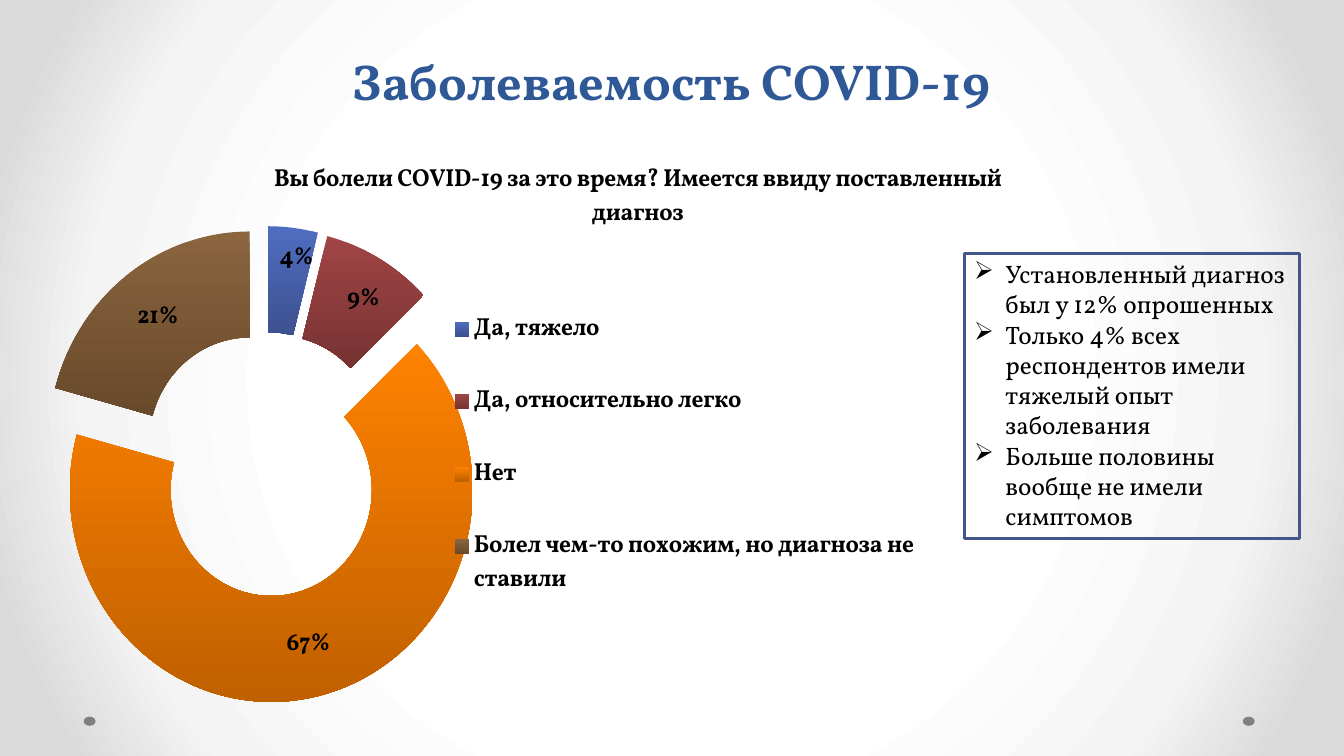
from lxml.etree import SubElement
from pptx import Presentation
from pptx.chart.data import CategoryChartData
from pptx.dml.color import RGBColor
from pptx.enum.chart import XL_CHART_TYPE, XL_LEGEND_POSITION
from pptx.enum.shapes import MSO_SHAPE
from pptx.enum.text import MSO_ANCHOR, PP_ALIGN
from pptx.oxml import parse_xml
from pptx.oxml.ns import nsdecls, qn
from pptx.util import Cm, Pt


class Theme:
    face = "Vollkorn"
    head = Pt(36)
    body = Pt(18)
    chart = Pt(17.6)
    blue = RGBColor.from_string("2F5897")
    edge = RGBColor.from_string("42568D")
    gray = RGBColor.from_string("808080")
    black = RGBColor.from_string("000000")
    glow = [(0, "FFFFFF"), (50, "FFFFFF"), (76, "F4F4F4"), (92, "DADADA"), (100, "DADADA")]


SHARES = [
    ("Да, тяжело", 4, ("4F6DC0", "3E5190")),
    ("Да, относительно легко", 9, ("A14545", "773232")),
    ("Нет", 67, ("FF8200", "C06000")),
    ("Болел чем-то похожим, но диагноза не ставили", 21, ("8A653E", "68492B")),
]
SHIFTS = [(0.01, -0.04), (0.01, -0.01)]
NOTES = [
    "Установленный диагноз был у 12% опрошенных",
    "Только 4% всех респондентов имели тяжелый опыт заболевания",
    "Больше половины вообще не имели симптомов",
]


def apply(item, **values):
    for name, value in values.items():
        setattr(item, name, value)


def style(font, size=Theme.body, bold=False, color=Theme.black):
    apply(font, name=Theme.face, size=size, bold=bold)
    font.color.rgb = color


def shade(slide):
    stops = "".join(
        f'<a:gs pos="{spot * 1000}"><a:srgbClr val="{tone}"/></a:gs>'
        for spot, tone in Theme.glow
    )
    back = parse_xml(
        f'<p:bg {nsdecls("p", "a")}><p:bgPr><a:gradFill rotWithShape="1">'
        f'<a:gsLst>{stops}</a:gsLst><a:path path="circle">'
        '<a:fillToRect l="50000" t="50000" r="50000" b="50000"/></a:path>'
        '</a:gradFill><a:effectLst/></p:bgPr></p:bg>'
    )
    slide.element.cSld.insert(0, back)


def add_dot(slide, left):
    dot = slide.shapes.add_shape(MSO_SHAPE.OVAL, Cm(left), Cm(18.06), Cm(0.3), Cm(0.23))
    dot.shadow.inherit = False
    dot.fill.solid()
    dot.fill.fore_color.rgb = Theme.gray
    dot.line.fill.background()


def add_head(slide, text):
    frame = slide.shapes.add_textbox(Cm(5.49), Cm(0), Cm(22.86), Cm(2.92)).text_frame
    apply(frame, word_wrap=True, vertical_anchor=MSO_ANCHOR.BOTTOM)
    para = frame.paragraphs[0]
    apply(para, text=text, alignment=PP_ALIGN.CENTER, line_spacing=Pt(58))
    style(para.runs[0].font, Theme.head, True, Theme.blue)


def place(part, index, mode="edge", inner=False, **spots):
    for old in part.findall(qn("c:layout")):
        part.remove(old)
    node = parse_xml(f'<c:layout {nsdecls("c")}><c:manualLayout/></c:layout>')
    rules = {"layoutTarget": "inner"} if inner else {}
    rules.update({f"{axis}Mode": mode for axis in "xy"})
    rules.update(spots)
    for name, value in rules.items():
        SubElement(node[0], qn(f"c:{name}")).set("val", str(value))
    part.insert(index, node)


def add_tags(row):
    form = '0"%"'
    tags = row.data_labels
    apply(
        tags,
        show_percentage=False,
        show_value=True,
        number_format=form,
        number_format_is_linked=False,
    )
    style(tags.font, Theme.chart, True)
    for index, (left, top) in enumerate(SHIFTS):
        tag = row.points[index].data_label
        style(tag.font, Theme.chart, True)
        part = tag._get_or_add_dLbl()
        place(part, 1, "factor", x=left, y=top)
        code = parse_xml(f'<c:numFmt {nsdecls("c")} sourceLinked="0"/>')
        code.set("formatCode", form)
        part.insert(2, code)


def add_ring(slide, text):
    data = CategoryChartData()
    data.categories = [name for name, _, _ in SHARES]
    data.add_series("Series 1", [value for _, value, _ in SHARES])
    chart = slide.shapes.add_chart(
        XL_CHART_TYPE.DOUGHNUT_EXPLODED, Cm(0), Cm(3.66), Cm(25.55), Cm(14.05), data
    ).chart
    style(chart.font)

    apply(chart, has_title=True, has_legend=True)
    title = chart.chart_title
    title.text_frame.text = text
    style(title.text_frame.paragraphs[0].runs[0].font, Theme.chart, True)
    place(title._element, 1, x=0.28, y=0.02)

    legend = chart.legend
    apply(legend, position=XL_LEGEND_POSITION.RIGHT, include_in_layout=False)
    style(legend.font, Theme.chart, True)
    place(legend._element, 1, x=0.46, y=0.23, w=0.5, h=0.65)

    plot = chart.plots[0]
    plot.vary_by_categories = True
    place(plot._element.getparent(), 0, inner=True, x=0.035, y=0.145, w=0.48, h=0.855)
    row = plot.series[0]
    for index, (_, _, tones) in enumerate(SHARES):
        form = row.points[index].format
        form.line.fill.background()
        form.fill.gradient()
        form.fill.gradient_angle = 270
        for stop, tone in zip(form.fill.gradient_stops, tones):
            stop.color.rgb = RGBColor.from_string(tone)
    add_tags(row)


def add_notes(slide, lines):
    box = slide.shapes.add_shape(MSO_SHAPE.RECTANGLE, Cm(24.3), Cm(6.39), Cm(8.46), Cm(7.19))
    box.shadow.inherit = False
    box.fill.background()
    box.line.color.rgb = Theme.edge
    box.line.width = Pt(2)
    frame = box.text_frame
    apply(frame, word_wrap=True, vertical_anchor=MSO_ANCHOR.TOP)
    for index, line in enumerate(lines):
        para = frame.add_paragraph() if index else frame.paragraphs[0]
        apply(para, text=line, alignment=PP_ALIGN.LEFT)
        style(para.runs[0].font)
        props = para._p.get_or_add_pPr()
        props.set("marL", str(Cm(0.79)))
        props.set("indent", str(Cm(-0.79)))
        SubElement(props, qn("a:buFont")).set("typeface", "OpenSymbol")
        SubElement(props, qn("a:buChar")).set("char", "➢")


def main():
    deck = Presentation()
    apply(deck, slide_width=Cm(33.87), slide_height=Cm(19.05))
    slide = deck.slides.add_slide(deck.slide_layouts[6])
    shade(slide)
    for left in (31.32, 2.11):
        add_dot(slide, left)
    add_head(slide, "Заболеваемость COVID-19")
    add_ring(slide, "Вы болели COVID-19 за это время? Имеется ввиду поставленный диагноз")
    add_notes(slide, NOTES)
    deck.save("out.pptx")


if __name__ == "__main__":
    main()
